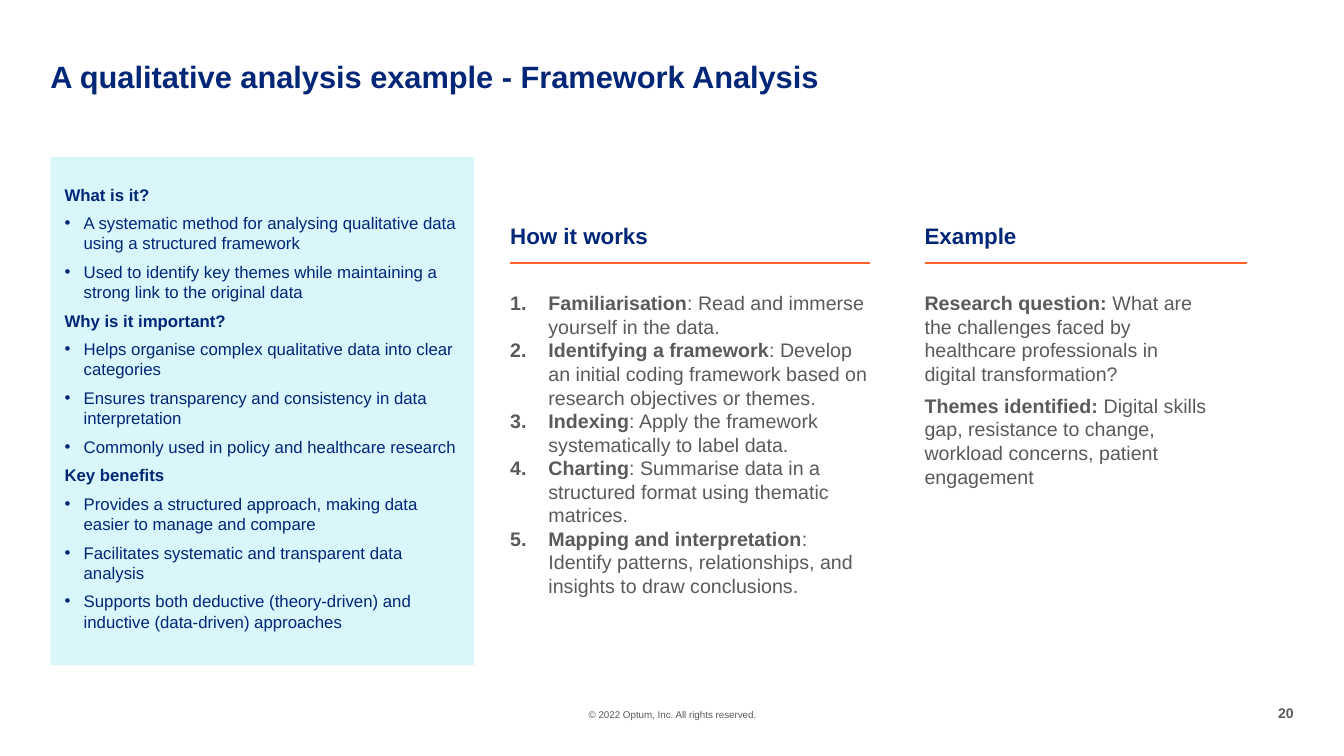
from lxml.etree import SubElement
from pptx import Presentation
from pptx.dml.color import RGBColor
from pptx.enum.shapes import MSO_CONNECTOR, MSO_SHAPE
from pptx.enum.text import PP_ALIGN
from pptx.oxml.ns import qn
from pptx.util import Inches, Pt

LINE = MSO_CONNECTOR.STRAIGHT
RECT = MSO_SHAPE.RECTANGLE
LEFT, MID, RIGHT = PP_ALIGN.LEFT, PP_ALIGN.CENTER, PP_ALIGN.RIGHT
COLORS = {"navy": "002677", "gray": "5A5A5A", "orange": "FF612B", "aqua": "D9F6FA"}
MARKS = {
    "dot": (0.19, "a:buChar", {"char": "•"}),
    "num": (0.38, "a:buAutoNum", {"type": "arabicPeriod"}),
}
TOPICS = {
    "What is it?": [
        "A systematic method for analysing qualitative data using a structured framework",
        "Used to identify key themes while maintaining a strong link to the original data",
    ],
    "Why is it important?": [
        "Helps organise complex qualitative data into clear categories",
        "Ensures transparency and consistency in data interpretation",
        "Commonly used in policy and healthcare research",
    ],
    "Key benefits": [
        "Provides a structured approach, making data easier to manage and compare",
        "Facilitates systematic and transparent data analysis",
        "Supports both deductive (theory-driven) and inductive (data-driven) approaches",
    ],
}
STEPS = [
    ("Familiarisation", ": Read and immerse yourself in the data."),
    ("Identifying a framework",
     ": Develop an initial coding framework based on research objectives or themes."),
    ("Indexing", ": Apply the framework systematically to label data."),
    ("Charting", ": Summarise data in a structured format using thematic matrices."),
    ("Mapping and interpretation",
     ": Identify patterns, relationships, and insights to draw conclusions."),
]
CASE = [
    ("Research question: ",
     "What are the challenges faced by healthcare professionals in digital transformation?"),
    ("Themes identified: ",
     "Digital skills gap, resistance to change, workload concerns, patient engagement"),
]


def color(name):
    """Return the named colour."""
    return RGBColor.from_string(COLORS[name])


def add_mark(para, mark):
    """Give a paragraph a hanging bullet or number."""
    indent, tag, attrs = MARKS[mark]
    props = para._p.get_or_add_pPr()
    props.set("marL", str(Inches(indent)))
    props.set("indent", str(-Inches(indent)))
    SubElement(props, qn("a:buFont"), typeface="Arial")
    SubElement(props, qn(tag), attrs)


def add_text(slide, box, paras, size, tint, gap=0, align=LEFT, space=1, wrap=True):
    """Add a text box of (bold part, plain part, mark) paragraphs."""
    frame = slide.shapes.add_textbox(*map(Inches, box)).text_frame
    form = {"word_wrap": wrap, "margin_left": 0, "margin_right": 0,
            "margin_top": 0, "margin_bottom": 0}
    for key, value in form.items():
        setattr(frame, key, value)
    for i, (head, body, mark) in enumerate(paras):
        para = frame.add_paragraph() if i else frame.paragraphs[0]
        if mark:
            add_mark(para, mark)
        form = {"alignment": align, "line_spacing": space,
                "space_before": Pt(gap if i else 0)}
        for key, value in form.items():
            setattr(para, key, value)
        for text, bold in ((head, True), (body, False)):
            if text:
                run = para.add_run()
                run.text = text
                form = {"name": "Arial", "size": Pt(size), "bold": bold}
                for key, value in form.items():
                    setattr(run.font, key, value)
                run.font.color.rgb = color(tint)


def add_panel(slide):
    """Add the tinted panel with its topics."""
    panel = slide.shapes.add_shape(RECT, *map(Inches, (0.5, 1.56, 4.2, 5.04)))
    panel.shadow.inherit = False
    panel.fill.solid()
    panel.fill.fore_color.rgb = color("aqua")
    panel.line.fill.background()
    paras = []
    for topic, points in TOPICS.items():
        paras.append((topic, "", None))
        paras += [("", point, "dot") for point in points]
    add_text(slide, (0.64, 1.83, 3.93, 4.76), paras, 12, "navy", gap=6)


def add_column(slide, left, rule, width, head, items, mark=None, gap=0):
    """Add a headed column with a rule under its heading."""
    add_text(slide, (left, 2.2, 2.95, 0.27), [(head, "", None)], 16, "navy")
    ends = map(Inches, (left, 2.61, left + rule, 2.61))
    line = slide.shapes.add_connector(LINE, *ends)
    line.line.color.rgb = color("orange")
    line.line.width = Pt(1.5)
    SubElement(line._element.spPr, qn("a:effectLst"))
    paras = [(*item, mark) for item in items]
    add_text(slide, (left, 2.89, width, 3.06), paras, 14, "gray", gap)


def main():
    """Build and save the slide."""
    deck = Presentation()
    deck.slide_width, deck.slide_height = Inches(13.33), Inches(7.5)
    slide = deck.slides.add_slide(deck.slide_layouts[6])
    title = "A qualitative analysis example - Framework Analysis"
    add_text(slide, (0.5, 0.61, 10.5, 0.33), [(title, "", None)], 22, "navy", space=0.9)
    add_panel(slide)
    add_column(slide, 5.06, 3.57, 3.57, "How it works", STEPS, mark="num")
    add_column(slide, 9.17, 3.2, 2.82, "Example", CASE, gap=6)
    note = "© 2022 Optum, Inc. All rights reserved."
    add_text(slide, (5.14, 7.03, 3.06, 0.12), [("", note, None)], 7, "gray", align=MID)
    add_text(slide, (12.66, 6.99, 0.17, 0.17), [("20", "", None)], 10, "gray",
             align=RIGHT, wrap=False)
    deck.save("out.pptx")


if __name__ == "__main__":
    main()
